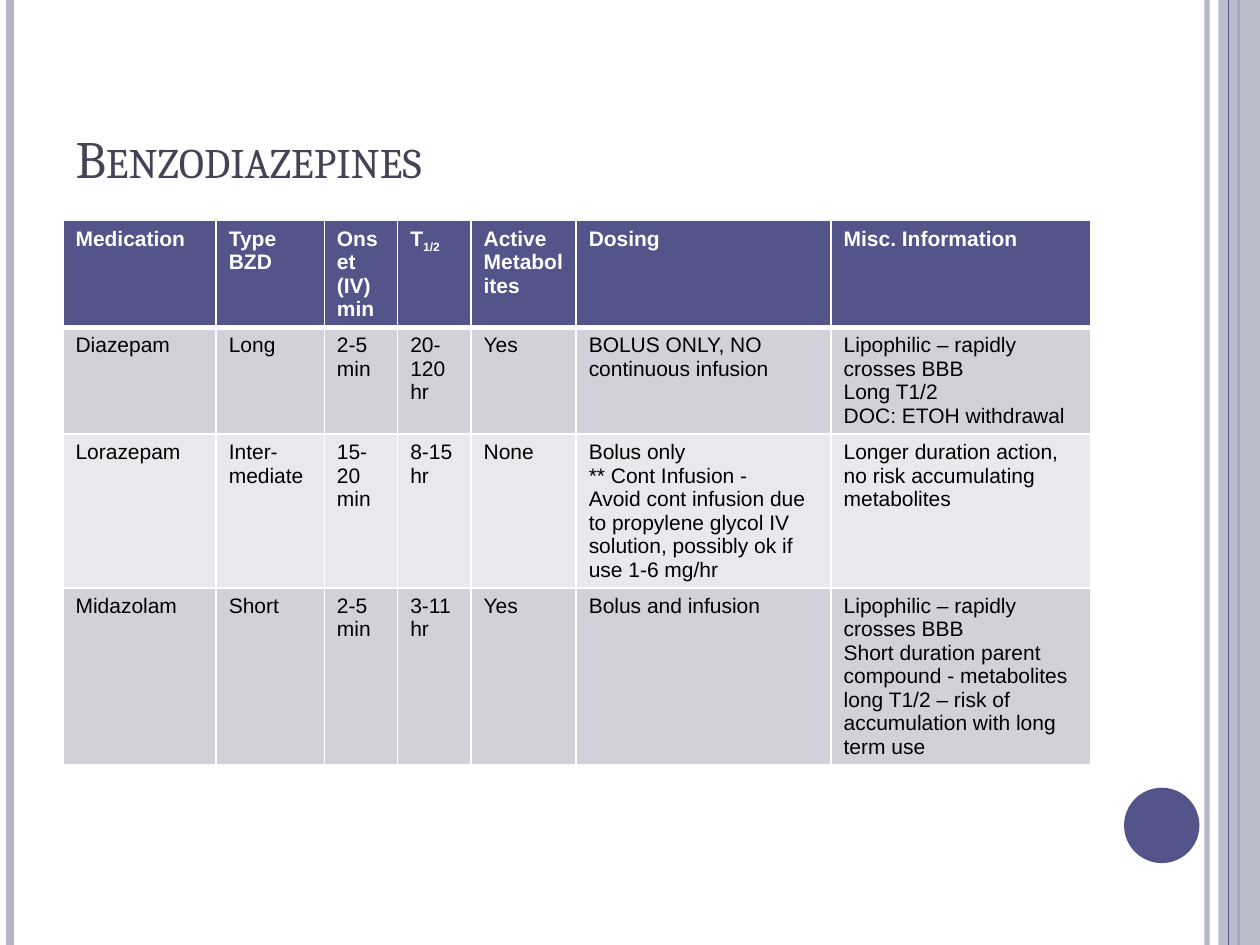
from lxml import etree
from pptx import Presentation
from pptx.dml.color import RGBColor
from pptx.enum import shapes, text
from pptx.oxml.ns import qn
from pptx.util import Cm, Pt

INDIGO = RGBColor(0x53, 0x54, 0x8A)
LAVENDER = RGBColor(0xB3, 0xB4, 0xC4)
SLATE = RGBColor(0x42, 0x44, 0x56)
BAND_DARK = RGBColor(0xD1, 0xD1, 0xDA)
BAND_LIGHT = RGBColor(0xE9, 0xE9, 0xED)
WHITE = RGBColor(0xFF, 0xFF, 0xFF)
BLACK = RGBColor(0, 0, 0)

COLUMN_WIDTHS = [3.09, 2.18, 1.48, 1.48, 2.12, 5.14, 5.23]
ROW_HEIGHT = 1.04
HEADER = ["Medication", "Type BZD", "Onset (IV) min", "T", "Active Metabolites",
          "Dosing", "Misc. Information"]
DRUGS = [
    ["Diazepam", "Long", "2-5\nmin", "20-120 hr", "Yes",
     "BOLUS ONLY, NO continuous infusion",
     "Lipophilic – rapidly crosses BBB\nLong T1/2\nDOC: ETOH withdrawal"],
    ["Lorazepam", "Inter-mediate", "15-20 min", "8-15 hr", "None",
     "Bolus only\n** Cont Infusion -\nAvoid cont infusion due to propylene glycol "
     "IV solution, possibly ok if use 1-6 mg/hr",
     "Longer duration action, no risk accumulating metabolites"],
    ["Midazolam", "Short", "2-5 min", "3-11 hr", "Yes", "Bolus and infusion",
     "Lipophilic – rapidly crosses BBB\nShort duration parent compound - metabolites "
     "long T1/2 – risk of accumulation with long term use"],
]


def add_run(p, content, font="Arial", size=12, color=BLACK, bold=False, **attrs):
    """Add a formatted run; attrs are extra run attributes such as cap or baseline."""
    r = p.add_run()
    r.text = content
    r.font.name, r.font.size, r.font.bold = font, Pt(size), bold
    r.font.color.rgb = color
    for name, value in attrs.items():
        r._r.get_or_add_rPr().set(name, value)


def set_alpha(sp, percent):
    color = next(sp._element.spPr.iter(qn("a:srgbClr")))
    etree.SubElement(color, qn("a:alpha"), val=str(percent * 1000))


def add_rule(slide, x, top, height, color, width):
    line = slide.shapes.add_connector(shapes.MSO_CONNECTOR.STRAIGHT,
                                      Cm(x), Cm(top), Cm(x), Cm(top + height))
    line.line.color.rgb = color
    line.line.width = Pt(width)
    etree.SubElement(line._element.spPr, qn("a:effectLst"))
    return line


def add_solid(slide, kind, left, top, width, height, color):
    sp = slide.shapes.add_shape(kind, Cm(left), Cm(top), Cm(width), Cm(height))
    sp.shadow.inherit = False
    sp.fill.solid()
    sp.fill.fore_color.rgb = color
    sp.line.fill.background()
    return sp


def set_borders(cell, bottom=1):
    tcPr = cell._tc.get_or_add_tcPr()
    for i, (side, width) in enumerate([("L", 1), ("R", 1), ("T", 1), ("B", bottom)]):
        ln = etree.Element(qn(f"a:ln{side}"), w=str(Pt(width)))
        fill = etree.SubElement(ln, qn("a:solidFill"))
        etree.SubElement(fill, qn("a:srgbClr"), val=str(WHITE))
        tcPr.insert(i, ln)


def frame(slide, left, top, width, height):
    """Side rules, right band and corner disc."""
    right = left + width
    set_alpha(add_rule(slide, right - 1.07, top, height, LAVENDER, 3), 93)
    add_rule(slide, left + 0.2, top, height, LAVENDER, 4.5)
    add_rule(slide, right - 0.43, top, height, INDIGO, 1.5)
    band = add_solid(slide, shapes.MSO_SHAPE.RECTANGLE,
                     right - 0.84, top, 0.84, height, LAVENDER)
    set_alpha(band, 87)
    add_rule(slide, right - 0.64, top, height, INDIGO, 0.75)
    add_solid(slide, shapes.MSO_SHAPE.OVAL, right - 2.74, top + 15.88, 1.52, 1.52, INDIGO)


def title(slide, left, top, width, height):
    sp = slide.shapes.title
    sp.left, sp.top, sp.width, sp.height = Cm(left), Cm(top), Cm(width), Cm(height)
    tf = sp.text_frame
    tf.word_wrap = True
    tf.vertical_anchor = text.MSO_ANCHOR.BOTTOM
    p = tf.paragraphs[0]
    p.alignment = text.PP_ALIGN.LEFT
    add_run(p, "Benzodiazepines", font="Cambria", size=30, color=SLATE, cap="small")


def drug_table(slide, left, top, width):
    rows = [HEADER] + DRUGS
    table = slide.shapes.add_table(len(rows), len(HEADER), Cm(left), Cm(top),
                                   Cm(width), Cm(ROW_HEIGHT * len(rows))).table
    for column, share in zip(table.columns, COLUMN_WIDTHS):
        column.width = Cm(width * share / sum(COLUMN_WIDTHS))
    for i, row in enumerate(rows):
        header = i == 0
        for j, content in enumerate(row):
            cell = table.cell(i, j)
            cell.fill.solid()
            cell.fill.fore_color.rgb = (INDIGO if header else
                                        BAND_DARK if i % 2 else BAND_LIGHT)
            set_borders(cell, bottom=3 if header else 1)
            tf = cell.text_frame
            for k, line in enumerate(content.split("\n")):
                p = tf.add_paragraph() if k else tf.paragraphs[0]
                add_run(p, line, color=WHITE if header else BLACK, bold=header)
    # Half-life subscript
    add_run(table.cell(0, HEADER.index("T")).text_frame.paragraphs[0], "1/2",
            color=WHITE, bold=True, baseline="-25000")


def main():
    prs = Presentation()
    prs.slide_width, prs.slide_height = Cm(25.4), Cm(19.05)
    slide = prs.slides.add_slide(prs.slide_layouts[5])
    frame(slide, 0, 0, 25.4, 19.05)
    title(slide, 1.27, 0.76, 20.75, 3.18)
    drug_table(slide, 1.27, 4.45, 20.72)
    prs.save("out.pptx")


if __name__ == "__main__":
    main()
